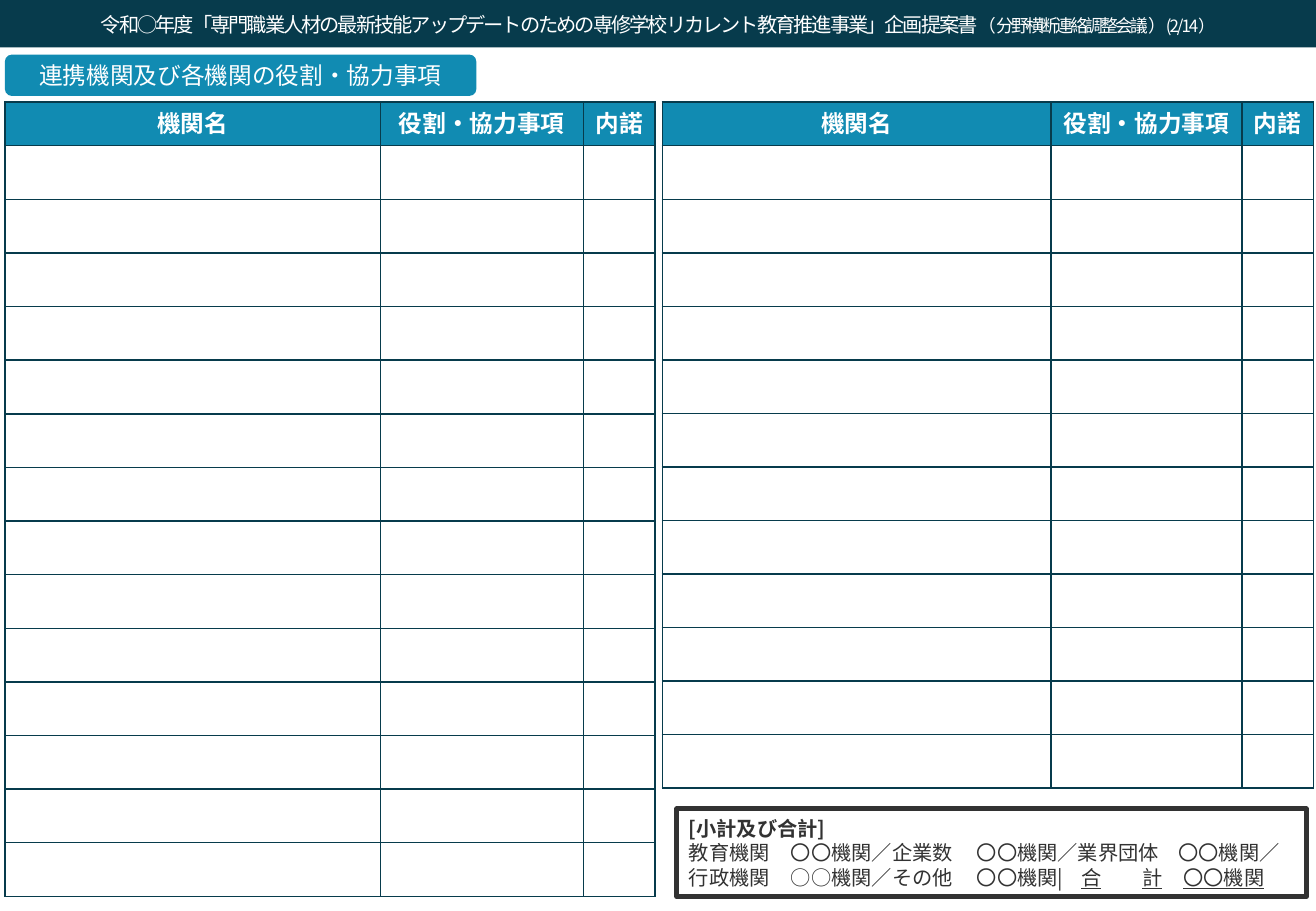
from dataclasses import dataclass

from lxml import etree
from pptx import Presentation
from pptx.dml.color import RGBColor
from pptx.enum.shapes import MSO_SHAPE
from pptx.enum.text import MSO_ANCHOR, PP_ALIGN
from pptx.oxml.ns import qn
from pptx.util import Inches, Pt

RECTANGLE = MSO_SHAPE.RECTANGLE
ROUNDED = MSO_SHAPE.ROUNDED_RECTANGLE
MIDDLE = MSO_ANCHOR.MIDDLE
CENTER, LEFT = PP_ALIGN.CENTER, PP_ALIGN.LEFT

COLORS = {"navy": "073B4C", "blue": "118BB2", "white": "FFFFFF", "dark": "323232"}
JAPANESE_FONT = "Noto Sans CJK JP"
TABLE_FONT = "Cabin"
TABLE_TOP = 0.84
HEADER_HEIGHT = 0.36
HEADERS = ("機関名", "役割・協力事項", "内諾")


@dataclass(frozen=True)
class PartnerTable:
    left: float
    height: float
    column_widths: tuple[float, ...]
    body_rows: int


@dataclass(frozen=True)
class TitlePart:
    text: str
    size: float
    spacing: float


@dataclass(frozen=True)
class SummaryLine:
    text: str
    bold: bool = False
    underlined: str = ""
    tabs: tuple[float, ...] = ()


TABLES = (
    PartnerTable(0.04, 6.54, (3.09, 1.67, 0.59), 14),
    PartnerTable(5.45, 5.65, (3.2, 1.57, 0.59), 12),
)
TITLE_PARTS = (
    TitlePart("令和○年度「専門職業人材の最新技能アップデートのための専修学校リカレント教育推進事業」企画提案書", 12, -1.2),
    TitlePart("（", 10.5, -1.2),
    TitlePart("分野横断連絡調整会議", 10.5, -1.6),
    TitlePart("）", 10.5, -1.2),
    TitlePart("(2/14）", 10, -1.2),
)
SUMMARY_LINES = (
    SummaryLine("[小計及び合計]", bold=True),
    SummaryLine("教育機関\t〇〇機関／企業数\t〇〇機関／業界団体\t〇〇機関／", tabs=(0.84, 2.37, 4.03)),
    SummaryLine("行政機関\t○○機関／その他\t〇〇機関|\t", underlined="合\t計\t〇〇機関",
                tabs=(0.84, 2.37, 3.23, 3.73, 4.07)),
)


def color(name: str) -> RGBColor:
    return RGBColor.from_string(COLORS[name])


def set_font(font, name: str, size: float, color_name: str, bold: bool = False) -> None:
    font.name = name
    font.size = Pt(size)
    font.bold = bold
    font.color.rgb = color(color_name)
    latin = font._element.find(qn("a:latin"))
    east_asian = etree.Element(qn("a:ea"), typeface=name)
    latin.addnext(east_asian)


def add_box(slide, preset, left: float, top: float, width: float, height: float):
    shape = slide.shapes.add_shape(preset, Inches(left), Inches(top), Inches(width), Inches(height))
    shape.shadow.inherit = False
    return shape


def add_filled_box(slide, preset, left: float, top: float, width: float, height: float, fill: str):
    shape = add_box(slide, preset, left, top, width, height)
    shape.fill.solid()
    shape.fill.fore_color.rgb = color(fill)
    shape.line.fill.background()
    return shape


def add_title(slide) -> None:
    bar = add_filled_box(slide, RECTANGLE, 0, 0, 10.84, 0.39, "navy")
    slide.shapes._spTree.insert(2, bar._element)
    title = slide.shapes.title
    title.left, title.top = Inches(0.5), Inches(0.05)
    title.width, title.height = Inches(9.83), Inches(0.3)
    frame = title.text_frame
    frame.word_wrap = True
    frame.vertical_anchor = MIDDLE
    frame.margin_top = frame.margin_bottom = 0
    paragraph = frame.paragraphs[0]
    paragraph.alignment = CENTER
    for part in TITLE_PARTS:
        run = paragraph.add_run()
        run.text = part.text
        set_font(run.font, JAPANESE_FONT, part.size, "white")
        run.font._element.set("spc", str(round(part.spacing * 100)))


def add_section_label(slide) -> None:
    label = add_filled_box(slide, ROUNDED, 0.04, 0.45, 3.88, 0.34, "blue")
    frame = label.text_frame
    frame.vertical_anchor = MIDDLE
    frame.margin_top = frame.margin_bottom = 0
    paragraph = frame.paragraphs[0]
    paragraph.text = "連携機関及び各機関の役割・協力事項"
    paragraph.alignment = CENTER
    set_font(paragraph.font, JAPANESE_FONT, 14, "white")


def add_borders(cell) -> None:
    properties = cell._tc.get_or_add_tcPr()
    for index, side in enumerate(("lnL", "lnR", "lnT", "lnB")):
        line = etree.Element(qn(f"a:{side}"), w=str(Pt(1)))
        fill = etree.SubElement(line, qn("a:solidFill"))
        etree.SubElement(fill, qn("a:srgbClr"), val=COLORS["navy"])
        properties.insert(index, line)


def add_partner_table(slide, partner: PartnerTable) -> None:
    frame = slide.shapes.add_table(
        partner.body_rows + 1, len(HEADERS), Inches(partner.left), Inches(TABLE_TOP),
        Inches(sum(partner.column_widths)), Inches(partner.height))
    table = frame.table
    table.horz_banding = False
    for column, width in zip(table.columns, partner.column_widths):
        column.width = Inches(width)
    body_height = (partner.height - HEADER_HEIGHT) / partner.body_rows
    for index, row in enumerate(table.rows):
        row.height = Inches(body_height if index else HEADER_HEIGHT)
        for cell, header in zip(row.cells, HEADERS):
            cell.margin_left = cell.margin_right = Inches(0.05)
            if index:
                cell.fill.background()
            else:
                cell.fill.solid()
                cell.fill.fore_color.rgb = color("blue")
                cell.vertical_anchor = MIDDLE
                paragraph = cell.text_frame.paragraphs[0]
                paragraph.text = header
                paragraph.alignment = CENTER
                set_font(paragraph.font, TABLE_FONT, 14, "white", bold=True)
            add_borders(cell)


def add_summary(slide) -> None:
    box = add_box(slide, RECTANGLE, 5.57, 6.66, 5.18, 0.72)
    box.fill.background()
    box.line.color.rgb = color("dark")
    box.line.width = Pt(3)
    frame = box.text_frame
    frame.word_wrap = True
    frame.vertical_anchor = MIDDLE
    frame.margin_top = frame.margin_bottom = 0
    for index, line in enumerate(SUMMARY_LINES):
        paragraph = frame.add_paragraph() if index else frame.paragraphs[0]
        paragraph.alignment = LEFT
        paragraph.line_spacing = Pt(14.5)
        if line.tabs:
            tab_list = etree.SubElement(paragraph._p.get_or_add_pPr(), qn("a:tabLst"))
            for position in line.tabs:
                etree.SubElement(tab_list, qn("a:tab"), pos=str(Inches(position)), algn="l")
        set_font(paragraph.font, JAPANESE_FONT, 12, "dark", line.bold)
        paragraph.add_run().text = line.text
        if line.underlined:
            run = paragraph.add_run()
            run.text = line.underlined
            run.font.underline = True


def main() -> None:
    presentation = Presentation()
    presentation.slide_width = Inches(10.83)
    presentation.slide_height = Inches(7.5)
    slide = presentation.slides.add_slide(presentation.slide_layouts[5])
    add_section_label(slide)
    add_summary(slide)
    for partner in TABLES:
        add_partner_table(slide, partner)
    add_title(slide)
    presentation.save("out.pptx")


if __name__ == "__main__":
    main()
